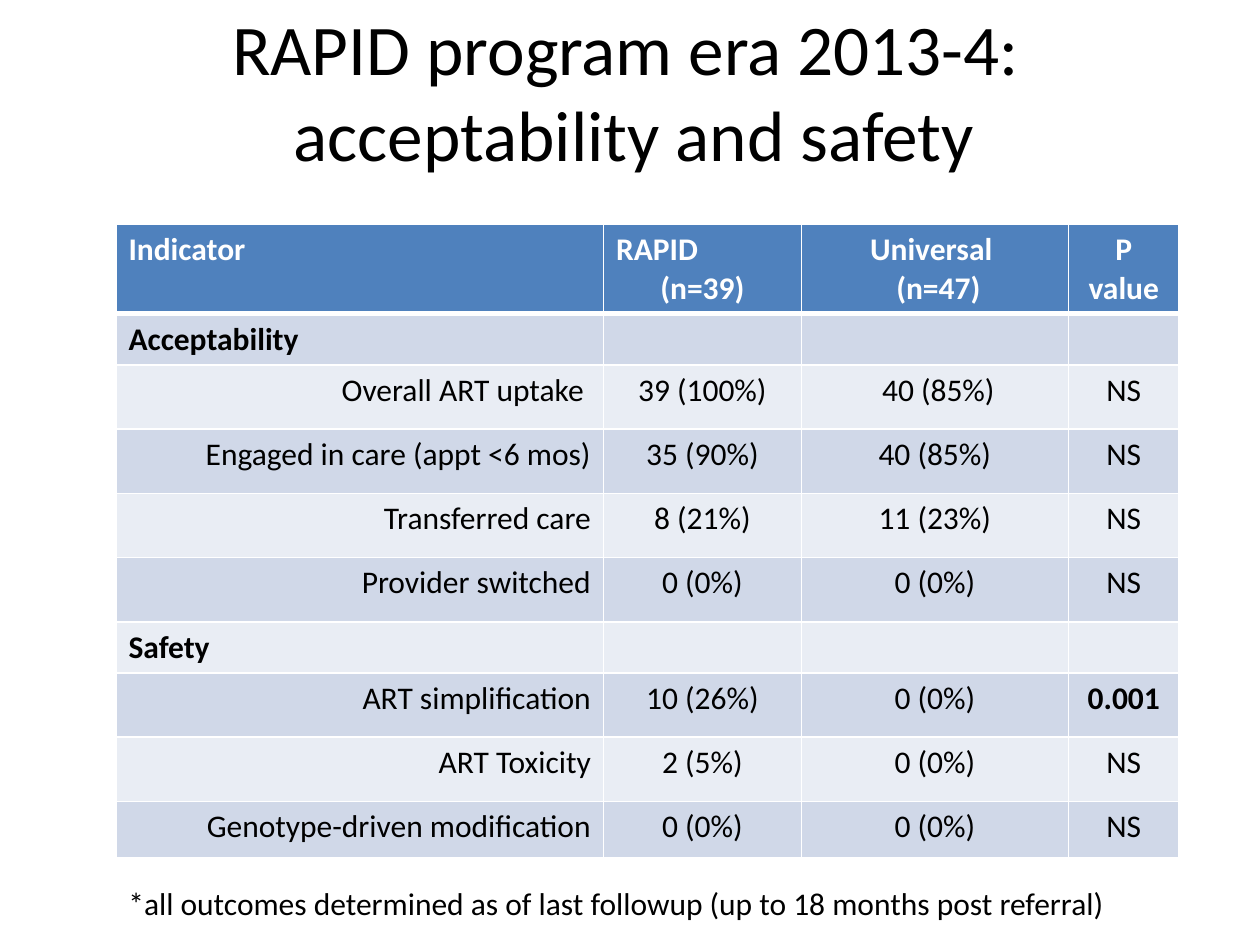
import lxml.etree
import pptx
import pptx.dml.color
import pptx.enum.text
import pptx.oxml.ns
import pptx.util

Inches = pptx.util.Inches
Pt = pptx.util.Pt
ALIGN = pptx.enum.text.PP_ALIGN
ANCHOR = pptx.enum.text.MSO_ANCHOR

COLORS = {
    "text": "000000",
    "white": "FFFFFF",
    "header": "4F81BD",
    "band_dark": "D0D8E8",
    "band_light": "E9EDF4",
}

COLUMN_WIDTHS = [3.87, 1.57, 2.12, 0.88]
HEADER_HEIGHT, SECTION_HEIGHT, ROW_HEIGHT, LAST_HEIGHT = 0.7, 0.4, 0.51, 0.45

# Each header cell is a list of (text, alignment) lines
HEADER = [
    [("Indicator", ALIGN.LEFT)],
    [("RAPID", ALIGN.LEFT), ("(n=39)", ALIGN.CENTER)],
    [("Universal ", ALIGN.CENTER), (" (n=47)", ALIGN.CENTER)],
    [("P value", ALIGN.CENTER)],
]

# A row with a single entry is a section heading
ROWS = [
    ["Acceptability"],
    [" Overall ART uptake ", "39 (100%)", " 40 (85%)", "NS"],
    ["Engaged in care (appt <6 mos)", "35 (90%)", "40 (85%)", "NS"],
    ["Transferred care", "8 (21%)", "11 (23%)", "NS"],
    ["Provider switched", "0 (0%)", "0 (0%)", "NS"],
    ["Safety"],
    ["ART simplification", "10 (26%)", "0 (0%)", "0.001"],
    ["ART Toxicity", "2 (5%)", "0 (0%)", "NS"],
    ["Genotype-driven modification", "0 (0%)", "0 (0%)", "NS"],
]


class SlideBuilder:
    font = "Calibri"
    body_size = 18

    def __init__(self, slide):
        self.slide = slide

    def rgb(self, name):
        return pptx.dml.color.RGBColor.from_string(COLORS[name])

    def add_lines(self, frame, lines, size=body_size, color="text", bold=False):
        for index, (text, align) in enumerate(lines):
            para = frame.paragraphs[0] if index == 0 else frame.add_paragraph()
            para.alignment = align
            span = para.add_run()
            span.text = text
            span.font.name = self.font
            span.font.size = Pt(size)
            span.font.bold = bold
            span.font.color.rgb = self.rgb(color)

    def text_box(self, left, top, width, height, lines, size=body_size, anchor=ANCHOR.TOP):
        box = self.slide.shapes.add_textbox(
            Inches(left), Inches(top), Inches(width), Inches(height))
        frame = box.text_frame
        frame.word_wrap = True
        frame.vertical_anchor = anchor
        self.add_lines(frame, lines, size)

    def borders(self, cell, top, bottom):
        properties = cell._tc.get_or_add_tcPr()
        widths = {"lnL": 1, "lnR": 1, "lnT": top, "lnB": bottom}
        for index, (side, width) in enumerate(widths.items()):
            line = lxml.etree.Element(pptx.oxml.ns.qn("a:" + side), w=str(Pt(width)))
            fill = lxml.etree.SubElement(line, pptx.oxml.ns.qn("a:solidFill"))
            lxml.etree.SubElement(fill, pptx.oxml.ns.qn("a:srgbClr"), val=COLORS["white"])
            properties.insert(index, line)

    def cell(self, cell, lines, fill, color="text", bold=False, top=1, bottom=1):
        cell.fill.solid()
        cell.fill.fore_color.rgb = self.rgb(fill)
        self.borders(cell, top, bottom)
        self.add_lines(cell.text_frame, lines, color=color, bold=bold)

    def table(self, left, top):
        heights = [HEADER_HEIGHT]
        heights += [SECTION_HEIGHT if len(row) == 1 else ROW_HEIGHT for row in ROWS]
        heights[-1] = LAST_HEIGHT
        table = self.slide.shapes.add_table(
            len(heights), len(COLUMN_WIDTHS), Inches(left), Inches(top),
            Inches(sum(COLUMN_WIDTHS)), Inches(sum(heights))).table
        for column, width in zip(table.columns, COLUMN_WIDTHS):
            column.width = Inches(width)
        for row, height in zip(table.rows, heights):
            row.height = Inches(height)

        # Header row
        for column, lines in enumerate(HEADER):
            self.cell(table.cell(0, column), lines, "header", "white", True, bottom=3)

        # Banded body rows
        for number, values in enumerate(ROWS, start=1):
            section = len(values) == 1
            band = "band_dark" if number % 2 else "band_light"
            for column in range(len(COLUMN_WIDTHS)):
                align = ALIGN.CENTER
                if column == 0:
                    align = ALIGN.LEFT if section else ALIGN.RIGHT
                lines = [(values[column], align)] if column < len(values) else []
                bold = section or values[column] == "0.001"
                self.cell(table.cell(number, column), lines, band, bold=bold,
                          top=3 if number == 1 else 1)


def main():
    deck = pptx.Presentation()
    deck.slide_width, deck.slide_height = Inches(10), Inches(7.5)
    page = SlideBuilder(deck.slides.add_slide(deck.slide_layouts[6]))

    # Results table
    page.table(0.92, 1.78)

    # Footnote
    page.text_box(0.92, 6.97, 8.82, 0.45, [
        ("*all outcomes determined as of last followup (up to 18 months post referral)",
         ALIGN.LEFT)])

    # Title
    page.text_box(0.53, 0.09, 9, 1.25, [
        ("RAPID program era 2013-4: ", ALIGN.CENTER),
        ("acceptability and safety", ALIGN.CENTER),
    ], size=40.7, anchor=ANCHOR.MIDDLE)

    deck.save("out.pptx")


if __name__ == "__main__":
    main()
